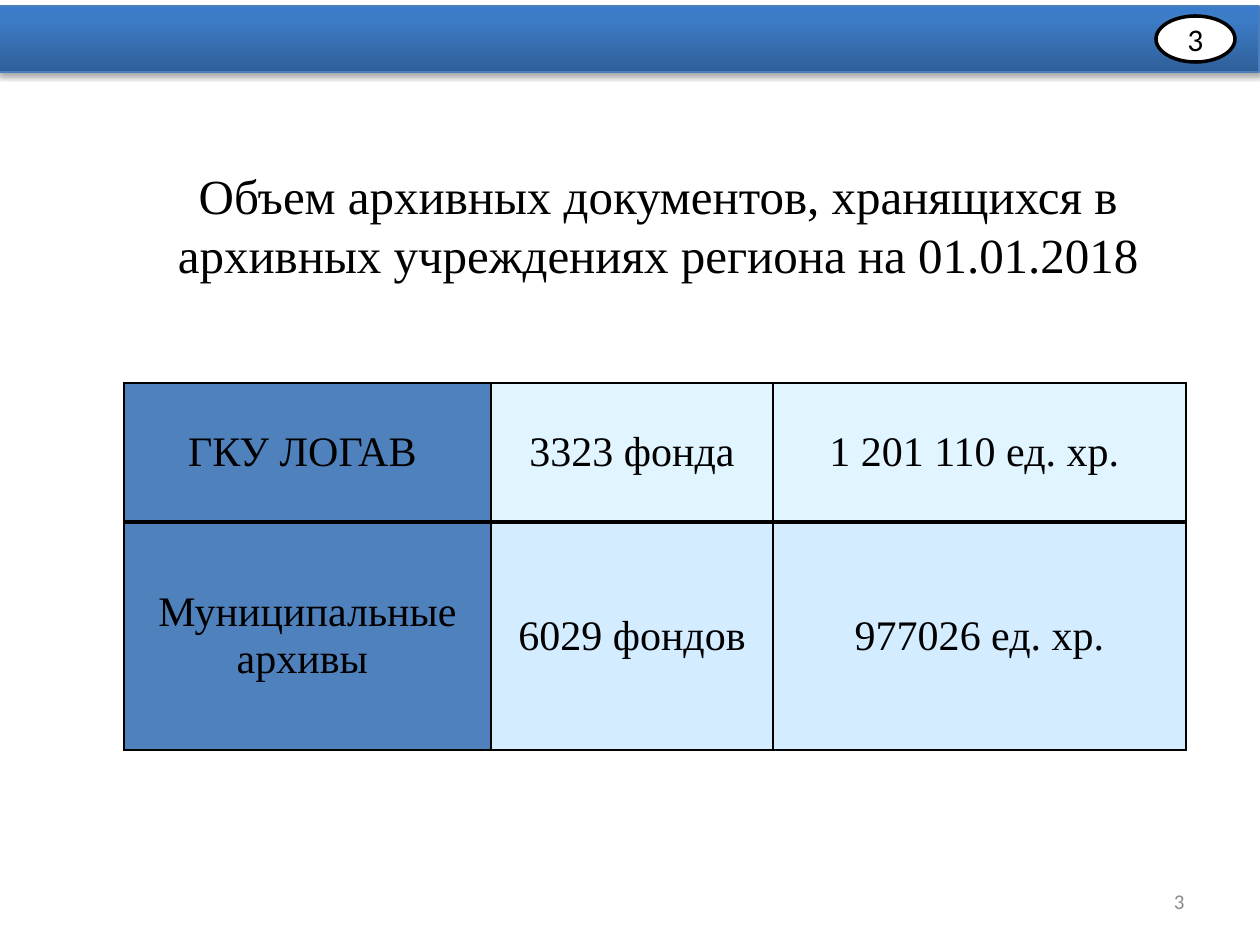
from dataclasses import dataclass
from lxml import etree
from pptx import Presentation
from pptx.dml.color import RGBColor
from pptx.enum.shapes import MSO_SHAPE
from pptx.enum.text import MSO_ANCHOR, PP_ALIGN
from pptx.oxml.ns import qn
from pptx.util import Emu, Pt

RECT, OVAL = MSO_SHAPE.RECTANGLE, MSO_SHAPE.OVAL
MIDDLE = MSO_ANCHOR.MIDDLE
CENTER, RIGHT = PP_ALIGN.CENTER, PP_ALIGN.RIGHT

BLACK = RGBColor(0x00, 0x00, 0x00)
WHITE = RGBColor(0xFF, 0xFF, 0xFF)
GRAY = RGBColor(0x8C, 0x8C, 0x8C)
EDGE = RGBColor(0x4B, 0x7E, 0xBC)
BLUE = RGBColor(0x4F, 0x81, 0xBD)
PALE = RGBColor(0xE0, 0xF5, 0xFF)
SKY = RGBColor(0xD3, 0xEC, 0xFF)
DEEP = RGBColor(0x2F, 0x5F, 0x99)
MID = RGBColor(0x3D, 0x7C, 0xC7)
BRIGHT = RGBColor(0x3A, 0x7C, 0xCB)
STOPS = ((0, DEEP), (80, MID), (100, BRIGHT))

SERIF, SANS = "Times New Roman", "Calibri"
SCALE = 914400 / 126


def px(count: int) -> Emu:
    return Emu(round(count * SCALE))


@dataclass
class Box:
    left: int
    top: int
    width: int
    height: int

    def emu(self) -> tuple:
        return tuple(map(px, (self.left, self.top, self.width, self.height)))


@dataclass
class Style:
    face: str
    size: int
    color: RGBColor = BLACK
    align: PP_ALIGN = CENTER


@dataclass
class Row:
    height: int
    tint: RGBColor
    texts: tuple
    rules: dict


COLS = (367, 282, 413)
ROWS = (
    Row(139, PALE, ("ГКУ ЛОГАВ ", "3323 фонда", "1\u00a0201 110 ед. хр. "),
        {"L": 1, "R": 1, "T": 1, "B": 3}),
    Row(228, SKY, ("Муниципальные архивы ", "6029 фондов", "977026 ед. хр."),
        {"L": 1, "R": 1, "T": 3, "B": 1}),
)


def write(frame, text: str, style: Style) -> None:
    frame.word_wrap = True
    frame.vertical_anchor = MIDDLE
    para = frame.paragraphs[0]
    para.text = text
    para.alignment = style.align
    para.font.name = style.face
    para.font.size = Pt(style.size)
    para.font.color.rgb = style.color


def label(slide, box: Box, text: str, style: Style) -> None:
    write(slide.shapes.add_textbox(*box.emu()).text_frame, text, style)


def tint(parent, color: RGBColor):
    return etree.SubElement(parent, qn("a:srgbClr"), val=str(color))


def banner(group, box: Box) -> None:
    bar = group.shapes.add_shape(RECT, *box.emu())
    bar.fill.gradient()
    bar.fill.gradient_angle = 90
    stops = bar.element.spPr.find(".//" + qn("a:gsLst"))
    for stop in list(stops):
        stops.remove(stop)
    for spot, color in STOPS:
        tint(etree.SubElement(stops, qn("a:gs"), pos=str(spot * 1000)), color)
    bar.line.color.rgb = EDGE
    bar.line.width = Pt(0.75)
    bar.shadow.inherit = False
    shade = etree.SubElement(
        bar.element.spPr.find(qn("a:effectLst")), qn("a:outerShdw"),
        blurRad=str(Pt(3.1)), dist=str(Pt(1.8)), dir="5400000", rotWithShape="0")
    etree.SubElement(tint(shade, BLACK), qn("a:alpha"), val="35000")


def badge(group, box: Box, text: str) -> None:
    oval = group.shapes.add_shape(OVAL, *box.emu())
    oval.shadow.inherit = False
    oval.fill.solid()
    oval.fill.fore_color.rgb = WHITE
    oval.line.color.rgb = BLACK
    oval.line.width = Pt(2)
    frame = oval.text_frame
    frame.margin_top = frame.margin_bottom = 0
    write(frame, text, Style(SANS, 18))


def border(cell, rules: dict) -> None:
    props = cell._tc.get_or_add_tcPr()
    for side, width in rules.items():
        line = etree.SubElement(props, qn("a:ln" + side), w=str(Pt(width)))
        tint(etree.SubElement(line, qn("a:solidFill")), BLACK)


def grid(slide, box: Box) -> None:
    table = slide.shapes.add_table(len(ROWS), len(COLS), *box.emu()).table
    table.first_row = table.horz_banding = False
    for col, width in zip(table.columns, COLS):
        col.width = px(width)
    for y, row in enumerate(ROWS):
        table.rows[y].height = px(row.height)
        for x, text in enumerate(row.texts):
            cell = table.cell(y, x)
            border(cell, row.rules)
            cell.fill.solid()
            cell.fill.fore_color.rgb = row.tint if x else BLUE
            cell.margin_left = cell.margin_right = px(9)
            cell.margin_top = cell.margin_bottom = 0
            write(cell.text_frame, text, Style(SERIF, 24))
            cell.vertical_anchor = MIDDLE


def main() -> None:
    deck = Presentation()
    deck.slide_width, deck.slide_height = px(1260), px(945)
    slide = deck.slides.add_slide(deck.slide_layouts[6])
    head = slide.shapes.add_group_shape()
    banner(head, Box(-1, 6, 1260, 66))
    badge(head, Box(1156, 16, 79, 46), "3")
    grid(slide, Box(124, 383, sum(COLS), sum(row.height for row in ROWS)))
    label(slide, Box(127, 125, 1062, 198),
          "Объем архивных документов, хранящихся в архивных учреждениях "
          "региона на 01.01.2018", Style(SERIF, 28))
    label(slide, Box(903, 876, 294, 50), "3", Style(SANS, 12, GRAY, RIGHT))
    deck.save("out.pptx")


if __name__ == "__main__":
    main()
